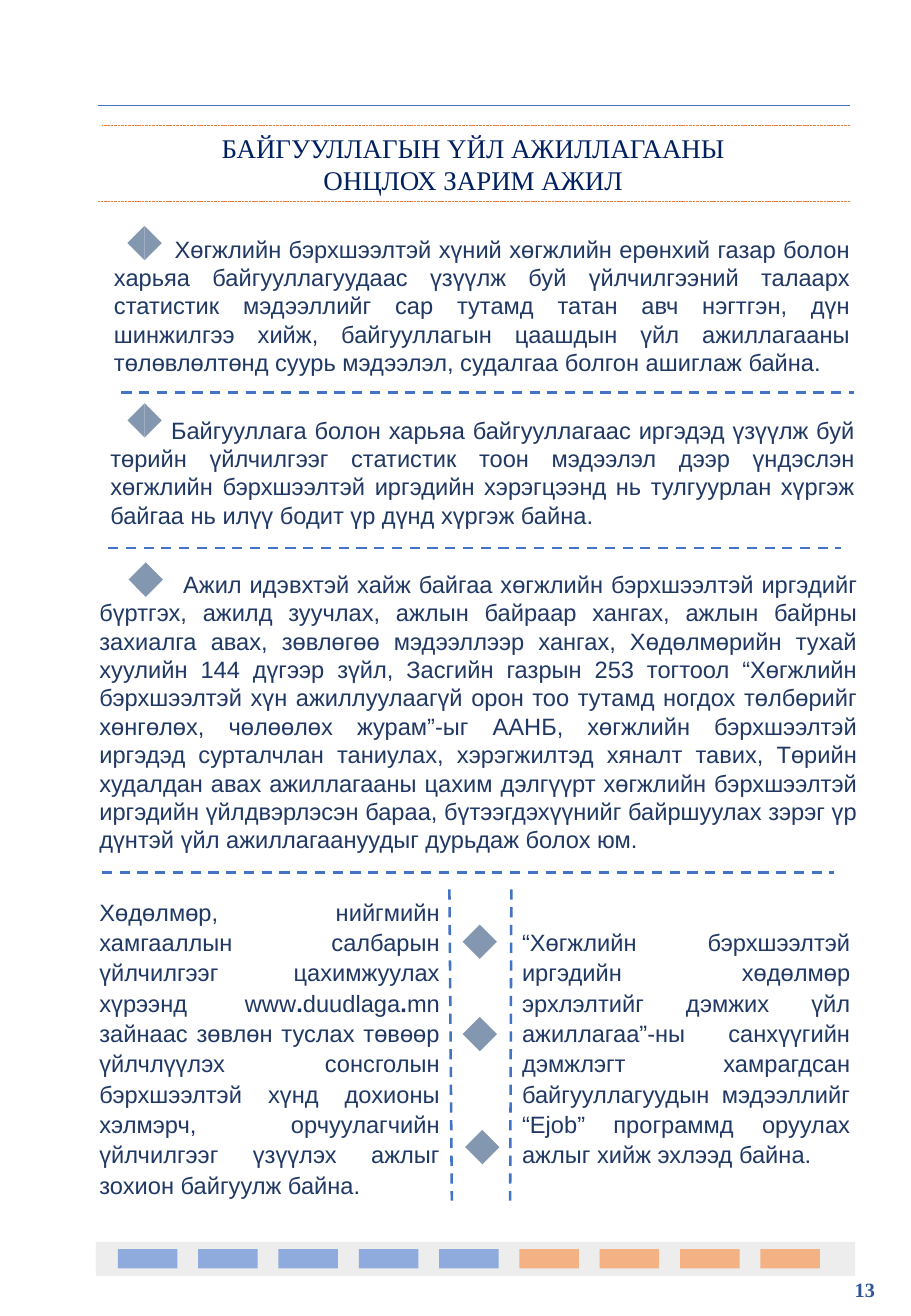
from lxml import etree
from pptx import Presentation
from pptx.dml.color import RGBColor
from pptx.enum.dml import MSO_LINE
from pptx.enum.shapes import MSO_CONNECTOR, MSO_SHAPE
from pptx.enum.text import MSO_ANCHOR, MSO_AUTO_SIZE, PP_ALIGN
from pptx.oxml.ns import qn
from pptx.util import Emu, Inches, Pt

STRAIGHT = MSO_CONNECTOR.STRAIGHT
RECTANGLE, TRIANGLE = MSO_SHAPE.RECTANGLE, MSO_SHAPE.RIGHT_TRIANGLE
DASH, FINE_DASH = MSO_LINE.DASH, MSO_LINE.SQUARE_DOT
JUSTIFY, CENTER = PP_ALIGN.JUSTIFY, PP_ALIGN.CENTER
TOP, FIXED_SIZE = MSO_ANCHOR.TOP, MSO_AUTO_SIZE.NONE

SANS, SERIF = "Arial", "Times New Roman"
NAVY, BODY, NUMBER = "002060", "203864", "2F5597"
BLUE, ORANGE, SLATE = "4472C4", "ED7D31", "8497B0"
BAND, BAR_BLUE, BAR_ORANGE = "EDEDED", "8FAADC", "F4B183"

HEADING = ["БАЙГУУЛЛАГЫН ҮЙЛ АЖИЛЛАГААНЫ", "ОНЦЛОХ ЗАРИМ АЖИЛ"]
STATISTICS = (
    "Хөгжлийн бэрхшээлтэй хүний хөгжлийн ерөнхий газар болон харьяа "
    "байгууллагуудаас үзүүлж буй үйлчилгээний талаарх статистик мэдээллийг "
    "сар тутамд татан авч нэгтгэн, дүн шинжилгээ хийж, байгууллагын "
    "цаашдын үйл ажиллагааны төлөвлөлтөнд суурь мэдээлэл, судалгаа болгон "
    "ашиглаж байна.")
SERVICES = (
    "Байгууллага болон харьяа байгууллагаас иргэдэд үзүүлж буй төрийн "
    "үйлчилгээг статистик тоон мэдээлэл дээр үндэслэн хөгжлийн бэрхшээлтэй "
    "иргэдийн хэрэгцээнд нь тулгуурлан хүргэж байгаа нь илүү бодит үр дүнд "
    "хүргэж байна.")
EMPLOYMENT = (
    "Ажил идэвхтэй хайж байгаа хөгжлийн бэрхшээлтэй иргэдийг бүртгэх, ажилд "
    "зуучлах, ажлын байраар хангах, ажлын байрны захиалга авах, зөвлөгөө "
    "мэдээллээр хангах, Хөдөлмөрийн тухай хуулийн 144 дүгээр зүйл, Засгийн "
    "газрын 253 тогтоол “Хөгжлийн бэрхшээлтэй хүн ажиллуулаагүй орон тоо "
    "тутамд ногдох төлбөрийг хөнгөлөх, чөлөөлөх журам”-ыг ААНБ, хөгжлийн "
    "бэрхшээлтэй иргэдэд сурталчлан таниулах, хэрэгжилтэд хяналт тавих, "
    "Төрийн худалдан авах ажиллагааны цахим дэлгүүрт хөгжлийн бэрхшээлтэй "
    "иргэдийн үйлдвэрлэсэн бараа, бүтээгдэхүүнийг байршуулах зэрэг үр дүнтэй "
    "үйл ажиллагаануудыг дурьдаж болох юм.")
SIGN_LANGUAGE = [
    "Хөдөлмөр, нийгмийн хамгааллын салбарын үйлчилгээг цахимжуулах хүрээнд www",
    ".", "duudlaga", ".",
    "mn зайнаас зөвлөн туслах төвөөр үйлчлүүлэх сонсголын бэрхшээлтэй хүнд "
    "дохионы хэлмэрч, орчуулагчийн үйлчилгээг үзүүлэх ажлыг зохион байгуулж "
    "байна."]
FUNDING = (
    "“Хөгжлийн бэрхшээлтэй иргэдийн хөдөлмөр эрхлэлтийг дэмжих үйл "
    "ажиллагаа”-ны санхүүгийн дэмжлэгт хамрагдсан байгууллагуудын мэдээллийг "
    "“Ejob” программд оруулах ажлыг хийж эхлээд байна.")


def color(value):
    return RGBColor.from_string(value)


def add_line(slide, start, end, line_color=BLUE, width=1.5, dash=DASH):
    line = slide.shapes.add_connector(
        STRAIGHT, *[Inches(value) for value in (*start, *end)])
    line.line.color.rgb = color(line_color)
    line.line.width = Pt(width)
    if dash:
        line.line.dash_style = dash
    etree.SubElement(line._element.spPr, qn("a:effectLst"))


def add_filled(slide, kind, box, fill, rotation=0):
    shape = slide.shapes.add_shape(kind, *[Inches(value) for value in box])
    shape.fill.solid()
    shape.fill.fore_color.rgb = color(fill)
    shape.line.fill.background()
    shape.shadow.inherit = False
    shape.rotation = rotation


def format_frame(frame):
    frame.word_wrap = True
    frame.auto_size = FIXED_SIZE
    frame.vertical_anchor = TOP
    frame.margin_left = frame.margin_right = Inches(0.1)
    frame.margin_top = frame.margin_bottom = Inches(0.05)


def format_paragraph(paragraph, align, size, name, font_color, spacing=1.0):
    paragraph.alignment = align
    paragraph.line_spacing = spacing
    paragraph.space_before = Pt(0)
    for run in paragraph.runs:
        run.font.size = Pt(size)
        run.font.name = name
        run.font.color.rgb = color(font_color)


def add_text(slide, box, pieces, indent=0.0, spacing=1.0):
    """Justified body paragraph; every second piece is bold."""
    text_box = slide.shapes.add_textbox(*[Inches(value) for value in box])
    format_frame(text_box.text_frame)
    paragraph = text_box.text_frame.paragraphs[0]
    for index, piece in enumerate(pieces):
        run = paragraph.add_run()
        run.text = piece
        run.font.bold = index % 2 == 1
    format_paragraph(paragraph, JUSTIFY, 14, SANS, BODY, spacing)
    paragraph._p.get_or_add_pPr().set("indent", str(Emu(Inches(indent))))


def add_diamond(slide, left, top, side=0.2):
    for rotation in (45, 225):
        add_filled(slide, TRIANGLE, (left, top, side, side), SLATE, rotation)


def add_heading(slide, left, top, width, height):
    add_line(slide, (0.81, top - 0.16), (7, top - 0.16), BLUE, 0.5, None)
    add_line(slide, (7, top), (0.84, top), ORANGE, 0.5, FINE_DASH)
    add_line(slide, (7, top + 0.63), (0.81, top + 0.63), ORANGE, 0.5, FINE_DASH)
    title = slide.shapes.title
    title.left, title.top = Inches(left), Inches(top)
    title.width, title.height = Inches(width), Inches(height)
    title.text_frame.text = "\n".join(HEADING)
    format_frame(title.text_frame)
    for paragraph in title.text_frame.paragraphs:
        format_paragraph(paragraph, CENTER, 16, SERIF, NAVY)


def add_section(slide, box, text, indent, diamond, rule_left, rule_top):
    """Marked paragraph closed by a dashed rule."""
    add_text(slide, box, [text], indent)
    add_diamond(slide, *diamond)
    add_line(slide, (rule_left, rule_top), (rule_left + 6.03, rule_top))


def add_columns(slide, left, top, width, height):
    """Two text columns with a marked gutter between them."""
    add_text(slide, (left, top, 3, height), SIGN_LANGUAGE, spacing=1.07)
    add_text(slide, (left + 3.48, top + 0.25, width - 3.48, height - 0.5),
             [FUNDING], spacing=1.07)
    bottom = top + height
    add_line(slide, (left + 2.98, top), (left + 3, bottom))
    add_line(slide, (left + 3.49, top), (left + 3.48, bottom))
    for x, y in ((3.13, 0.33), (3.13, 1.09), (3.15, 2.02)):
        add_diamond(slide, left + x, top + y)


def add_footer(slide, left, top, width, height):
    add_filled(slide, RECTANGLE, (left, top, width, height), BAND)
    pitch = 0.66125
    for index in range(9):
        fill = BAR_BLUE if index < 5 else BAR_ORANGE
        add_filled(slide, RECTANGLE,
                   (left + 0.18 + index * pitch, top + 0.06, 0.49, 0.16), fill)
    # Page number
    number = slide.shapes.add_textbox(
        Inches(left + 6.08), Inches(top + 0.24), Inches(0.5), Inches(0.3))
    format_frame(number.text_frame)
    paragraph = number.text_frame.paragraphs[0]
    paragraph.text = "13"
    format_paragraph(paragraph, CENTER, 12, SERIF, NUMBER)
    paragraph.runs[0].font.bold = True


def main():
    presentation = Presentation()
    presentation.slide_width = Inches(7.5)
    presentation.slide_height = Inches(10.83)
    slide = presentation.slides.add_slide(presentation.slide_layouts[5])
    add_heading(slide, 0.89, 1.03, 6.01, 0.66)
    add_section(slide, (0.84, 1.88, 6.26, 1.28), STATISTICS, 0.5,
                (1.09, 1.9), 1, 3.23)
    add_section(slide, (0.81, 3.37, 6.33, 1.1), SERVICES, 0.5,
                (1.09, 3.36), 0.89, 4.51)
    add_section(slide, (0.72, 4.64, 6.44, 2.46), EMPLOYMENT, 0.69,
                (1.1, 4.67), 0.84, 7.18)
    add_columns(slide, 0.72, 7.32, 6.38, 2.56)
    add_footer(slide, 0.79, 10.22, 6.25, 0.28)
    presentation.save("out.pptx")


if __name__ == "__main__":
    main()
